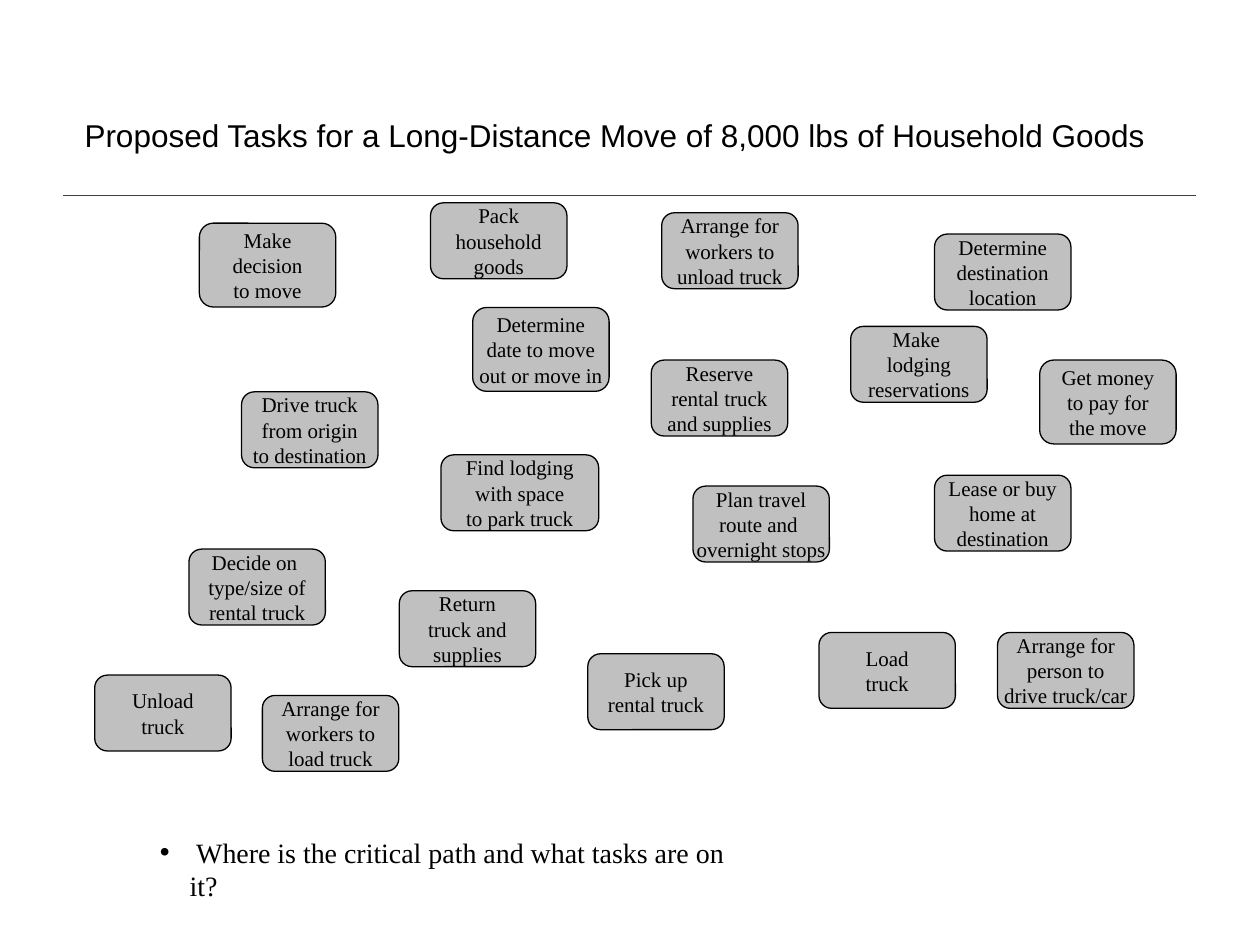
from dataclasses import dataclass

from lxml.etree import SubElement
from pptx import Presentation
from pptx.dml.color import RGBColor
from pptx.enum.shapes import MSO_CONNECTOR, MSO_SHAPE
from pptx.enum.text import MSO_ANCHOR, MSO_AUTO_SIZE, PP_ALIGN
from pptx.oxml.ns import qn
from pptx.util import Cm, Pt


@dataclass(frozen=True)
class Theme:
    ink: RGBColor = RGBColor(0x00, 0x00, 0x00)
    rule: RGBColor = RGBColor(0x40, 0x40, 0x40)
    task_fill: RGBColor = RGBColor(0xC0, 0xC0, 0xC0)
    title_font: str = "Arial"
    text_font: str = "Times New Roman"
    title_size: Pt = Pt(18)
    question_size: Pt = Pt(16)
    task_size: Pt = Pt(12)


TASK_WIDTH, TASK_HEIGHT = 2.75, 1.53
WIDE, TALL = 3.18, 1.69

# Label, left, top and, where they differ from the usual, width and height (cm)
TASKS = [
    ("Load\ntruck", 16.51, 12.75),
    ("Unload\ntruck", 1.91, 13.61),
    ("Drive truck\nfrom origin\nto destination", 4.87, 7.9),
    ("Return\ntruck and\nsupplies", 8.05, 11.91),
    ("Decide on \ntype/size of\nrental truck", 3.81, 11.07),
    ("Reserve\nrental truck\nand supplies", 13.13, 7.26),
    ("Arrange for\nworkers to\nload truck", 5.29, 14.02),
    ("Pick up\nrental truck", 11.85, 13.18),
    ("Arrange for\nworkers to\nunload truck", 13.34, 4.29),
    ("Arrange for\nperson to\ndrive truck/car", 20.11, 12.75),
    ("Find lodging\nwith space\nto park truck", 8.89, 9.17, WIDE),
    ("Make \nlodging\nreservations", 17.15, 6.58),
    ("Determine\ndestination\nlocation", 18.84, 4.72),
    ("Determine\ndate to move\nout or move in", 9.53, 6.2, TASK_WIDTH, TALL),
    ("Make\ndecision\nto move", 4.02, 4.5, TASK_WIDTH, TALL),
    ("Pack\nhousehold\ngoods", 8.68, 4.09),
    ("Plan travel\nroute and \novernight stops", 13.97, 9.8),
    ("Get money\nto pay for\nthe move", 20.96, 7.26, TASK_WIDTH, TALL),
    ("Lease or buy\nhome at\ndestination", 18.84, 9.58),
]


class SlideBuilder:
    """Holds the theme and the current slide."""

    def __init__(self, slide, theme):
        self.slide = slide
        self.theme = theme

    def set_text(self, shape, text, font_name, size, alignment, anchor, wrap):
        frame = shape.text_frame
        frame.text = text
        frame.auto_size = MSO_AUTO_SIZE.NONE
        frame.vertical_anchor = anchor
        frame.word_wrap = wrap
        for paragraph in frame.paragraphs:
            paragraph.alignment = alignment
            paragraph.space_before = Pt(0)
            paragraph.font.name = font_name
            paragraph.font.size = size
            paragraph.font.color.rgb = self.theme.ink

    def place(self, shape, left, top, width, height):
        shape.left, shape.top = Cm(left), Cm(top)
        shape.width, shape.height = Cm(width), Cm(height)

    def title(self, text, *box):
        shape = self.slide.shapes.title
        self.place(shape, *box)
        self.set_text(shape, text, self.theme.title_font, self.theme.title_size,
                      PP_ALIGN.LEFT, MSO_ANCHOR.TOP, False)

    def question(self, text, *box):
        """Fill the body placeholder with one bullet and a hanging indent."""
        shape = self.slide.placeholders[1]
        self.place(shape, *box)
        self.set_text(shape, text, self.theme.text_font, self.theme.question_size,
                      PP_ALIGN.LEFT, MSO_ANCHOR.TOP, True)
        properties = shape.text_frame.paragraphs[0]._p.get_or_add_pPr()
        properties.set("marL", str(Cm(0.6)))
        properties.set("indent", str(Cm(-0.6)))

    def rule(self, left, right, top):
        line = self.slide.shapes.add_connector(
            MSO_CONNECTOR.STRAIGHT, Cm(left), Cm(top), Cm(right), Cm(top))
        line.line.color.rgb = self.theme.rule
        line.line.width = Pt(1)
        SubElement(line._element.spPr, qn("a:effectLst"))

    def task(self, label, left, top, width=TASK_WIDTH, height=TASK_HEIGHT):
        shape = self.slide.shapes.add_shape(
            MSO_SHAPE.ROUNDED_RECTANGLE, Cm(left), Cm(top), Cm(width), Cm(height))
        shape.shadow.inherit = False
        shape.fill.solid()
        shape.fill.fore_color.rgb = self.theme.task_fill
        shape.line.color.rgb = self.theme.ink
        shape.line.width = Pt(0.75)
        self.set_text(shape, label, self.theme.text_font, self.theme.task_size,
                      PP_ALIGN.CENTER, MSO_ANCHOR.MIDDLE, False)


def main():
    presentation = Presentation()
    presentation.slide_width, presentation.slide_height = Cm(25.4), Cm(19.05)
    slide = presentation.slides.add_slide(presentation.slide_layouts[1])
    builder = SlideBuilder(slide, Theme())
    builder.rule(1.27, 24.1, 3.94)
    builder.title("Proposed Tasks for a Long-Distance Move of 8,000 lbs of Household Goods",
                  1.45, 2.21, 22.02, 1.02)
    for task in TASKS:
        builder.task(*task)
    builder.question(" Where is the critical path and what tasks are on it?",
                     2.97, 16.71, 12.37, 0.94)
    presentation.save("out.pptx")


if __name__ == "__main__":
    main()
